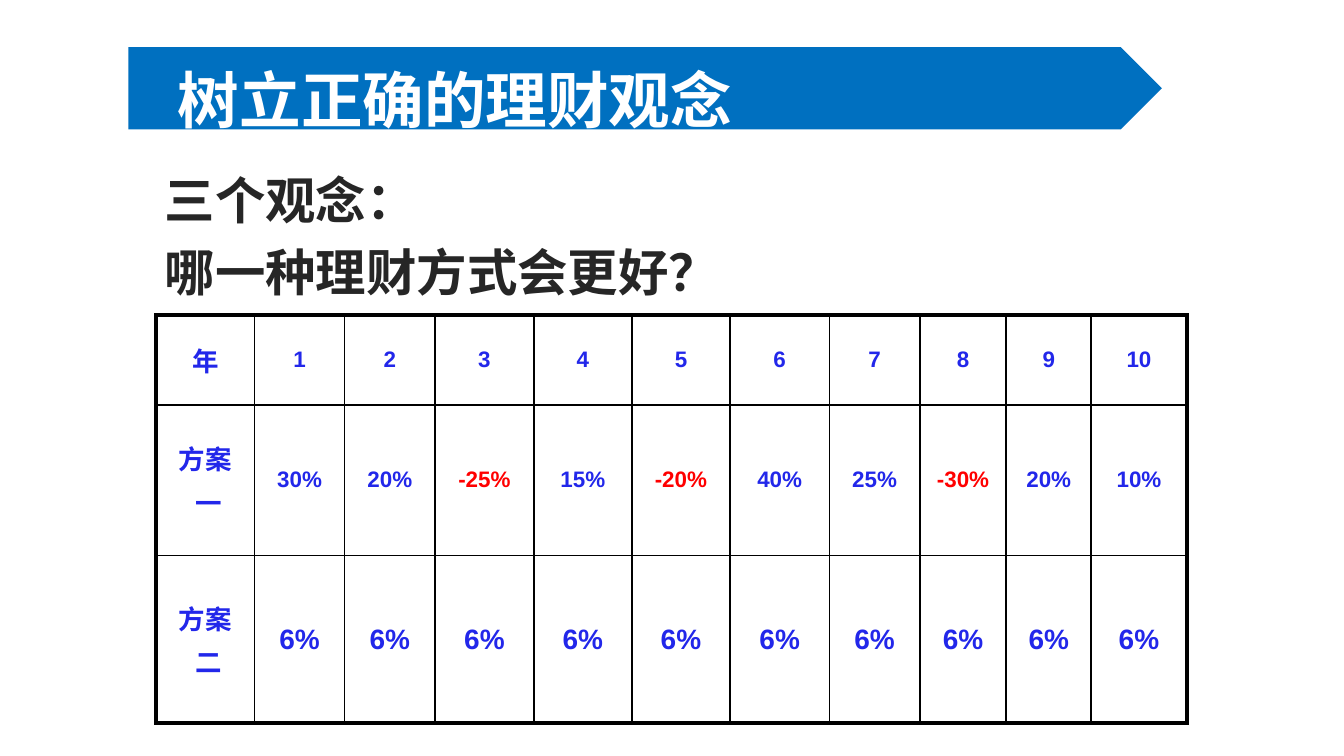
"""Build a slide comparing the yearly returns of two savings plans in a table."""
from lxml import etree
from pptx import Presentation
from pptx.dml.color import RGBColor
from pptx.enum.shapes import MSO_SHAPE
from pptx.enum.text import MSO_ANCHOR, MSO_AUTO_SIZE, PP_ALIGN
from pptx.oxml import parse_xml
from pptx.oxml.ns import qn
from pptx.util import Inches, Pt

PENTAGON = MSO_SHAPE.PENTAGON
BOTTOM, MIDDLE = MSO_ANCHOR.BOTTOM, MSO_ANCHOR.MIDDLE
LEFT, CENTER = PP_ALIGN.LEFT, PP_ALIGN.CENTER
NO_FIT = MSO_AUTO_SIZE.NONE
CJK = "Noto Sans CJK SC"
NS = "http://schemas.openxmlformats.org/drawingml/2006/main"
BLUE, RED = "2227EA", "FF0000"

prs = Presentation()
prs.slide_width = Inches(10)
prs.slide_height = prs.slide_width * 9 // 16
W, H = prs.slide_width, prs.slide_height


def box(x, y, w, h):
    """Turn percentages of the slide into left, top, width and height."""
    return int(W * x / 100), int(H * y / 100), int(W * w / 100), int(H * h / 100)


def style(p, font, size, color, align):
    """Format a paragraph and its runs."""
    p.alignment = align
    for r in p.runs:
        r.font.name, r.font.size, r.font.bold = font, Pt(size), True
        r.font.color.rgb = RGBColor.from_string(color)
        ea = etree.Element(qn("a:ea"), typeface=CJK)
        r.font._element.find(qn("a:latin")).addnext(ea)


s = prs.slides.add_slide(prs.slide_layouts[5])
banner = s.shapes.add_shape(PENTAGON, *box(9.55, 6.25, 76.9, 10.87))
banner.shadow.inherit = False
banner.fill.solid()
banner.fill.fore_color.rgb = RGBColor.from_string("0070C0")
banner.line.fill.background()

title = s.shapes.title
title.element.getparent().append(title.element)
lines = [
    (title, "树立正确的理财观念", 12.53, 4.8, 33, "FFFFFF"),
    (None, "三个观念：", 11.55, 17.12, 27, "262626"),
    (None, "哪一种理财方式会更好？", 11.55, 26.69, 27, "262626"),
]
for sp, text, x, y, size, color in lines:
    area = box(x, y, 64.2, 14.04)
    sp = sp or s.shapes.add_textbox(*area)
    sp.left, sp.top, sp.width, sp.height = area
    tf = sp.text_frame
    tf.text = text
    tf.word_wrap, tf.auto_size, tf.vertical_anchor = True, NO_FIT, BOTTOM
    tf.margin_left = tf.margin_right = Inches(0.07)
    tf.margin_top = tf.margin_bottom = Inches(0.04)
    p = tf.paragraphs[0]
    p.line_spacing = 0.9
    style(p, CJK, size, color, LEFT)

rows = [
    ["年", *map(str, range(1, 11))],
    ["方案\n 一", "30%", "20%", "-25%", "15%", "-20%", "40%", "25%", "-30%", "20%", "10%"],
    ["方案\n 二"] + ["6%"] * 10,
]
widths = [7.35, 6.7, 6.73, 7.35, 7.3, 7.3, 7.4, 6.73, 6.43, 6.33, 7.1]
heights = [11.91, 19.91, 22.22]
value_sizes = [12, 12, 15]
last_row, last_col = len(rows) - 1, len(widths) - 1

table = s.shapes.add_table(len(rows), len(widths), *box(11.6, 41.65, sum(widths), sum(heights))).table
table.first_row = table.horz_banding = False
for column, width in zip(table.columns, widths):
    column.width = int(W * width / 100)
for i, (row, height) in enumerate(zip(rows, heights)):
    table.rows[i].height = int(H * height / 100)
    for j, text in enumerate(row):
        cell = table.cell(i, j)
        cell.text_frame.text = text
        cell.vertical_anchor = MIDDLE
        cell.margin_left = cell.margin_right = Inches(0.11)
        cell.margin_top = cell.margin_bottom = Inches(0.11)
        cell.fill.background()
        for k, p in enumerate(cell.text_frame.paragraphs):
            if k:
                p.space_before = Pt(2.8)
            style(p, "Arial", value_sizes[i] if j else 14.2,
                  RED if text.startswith("-") else BLUE, CENTER)
        outer = {"L": j == 0, "R": j == last_col, "T": i == 0, "B": i == last_row}
        for n, (side, edge) in enumerate(outer.items()):
            width = Pt(2.25 if edge else 1)
            cell._tc.get_or_add_tcPr().insert(n, parse_xml(
                f'<a:ln{side} xmlns:a="{NS}" w="{width}"><a:solidFill>'
                f'<a:srgbClr val="000000"/></a:solidFill></a:ln{side}>'))

prs.save("out.pptx")
